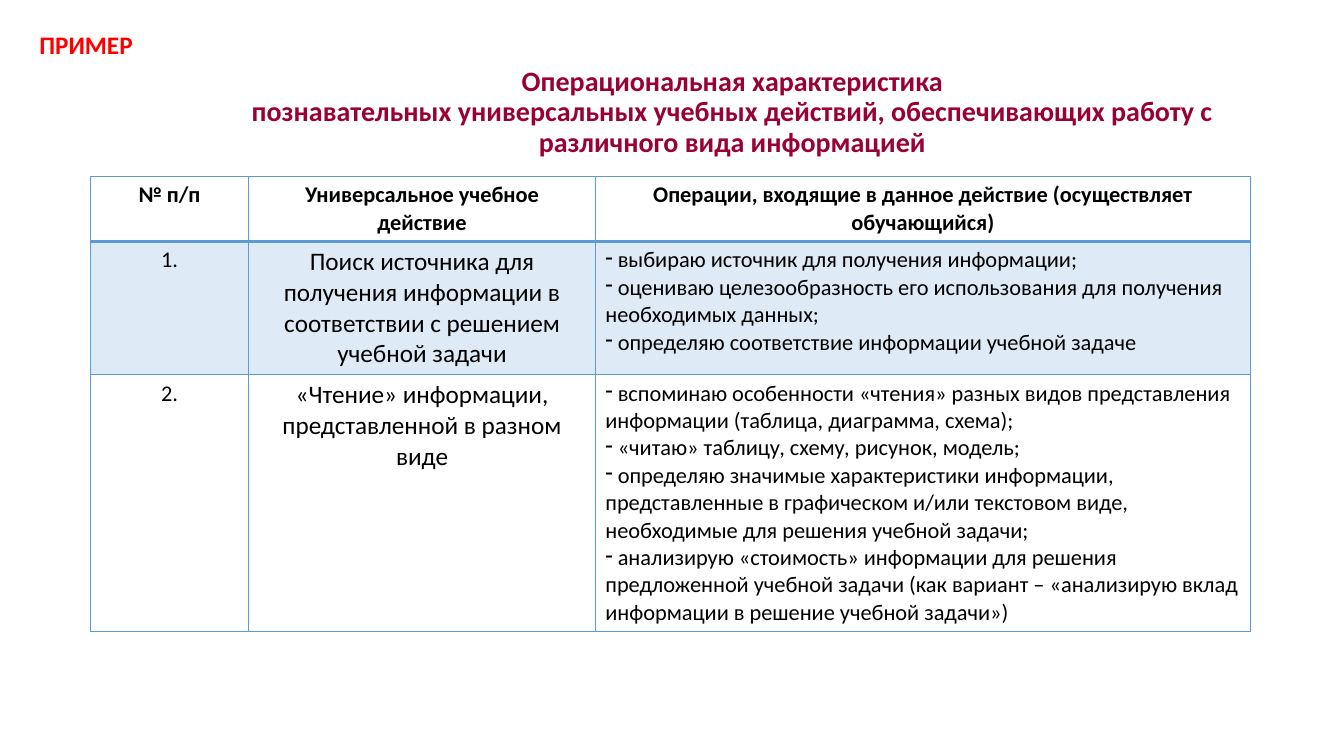
from lxml.etree import SubElement
from pptx import Presentation
from pptx.dml.color import RGBColor
from pptx.enum.text import MSO_ANCHOR, MSO_AUTO_SIZE, PP_ALIGN
from pptx.oxml.ns import qn
from pptx.util import Pt

PX = 9525  # EMU in one px, 96 px to the inch
FONT = "Calibri"
BLACK = RGBColor(0x00, 0x00, 0x00)
RED = RGBColor(0xFF, 0x00, 0x00)
CRIMSON = RGBColor(0x99, 0x00, 0x33)
BLUE = RGBColor(0x5B, 0x9B, 0xD5)
PALE_BLUE = RGBColor(0xDE, 0xEB, 0xF7)

TITLE = (
    "Операциональная характеристика\v"
    "познавательных универсальных учебных действий, "
    "обеспечивающих работу с различного вида информацией"
)
HEADERS = [
    "№ п/п",
    "Универсальное учебное действие",
    "Операции, входящие в данное действие (осуществляет обучающийся)",
]
ACTIONS = [
    ("Поиск источника для получения информации в соответствии с решением учебной задачи", [
        "выбираю источник для получения информации;",
        "оцениваю целезообразность его использования для получения необходимых данных;",
        "определяю соответствие информации учебной задаче",
    ]),
    ("«Чтение» информации, представленной в разном виде", [
        "вспоминаю особенности «чтения» разных видов представления информации "
        "(таблица, диаграмма, схема);",
        "«читаю» таблицу, схему, рисунок, модель;",
        "определяю значимые характеристики информации, представленные в графическом "
        "и/или текстовом виде, необходимые для решения учебной задачи;",
        "анализирую «стоимость» информации для решения предложенной учебной задачи "
        "(как вариант – «анализирую вклад информации в решение учебной задачи»)",
    ]),
]
COLUMN_WIDTHS = [151, 330, 624]
ROW_HEIGHTS = [62, 127, 244]


def place(shape, left, top, width, height):
    shape.left, shape.top = left * PX, top * PX
    shape.width, shape.height = width * PX, height * PX


def format_text(text_frame, size, color, bold=False, align=PP_ALIGN.LEFT):
    for paragraph in text_frame.paragraphs:
        paragraph.alignment = align
        for run in paragraph.runs:
            run.font.name = FONT
            run.font.size = Pt(size)
            run.font.bold = bold
            run.font.color.rgb = color


def add_dash_bullets(text_frame):
    for paragraph in text_frame.paragraphs:
        properties = paragraph._p.get_or_add_pPr()
        properties.set("marL", "0")
        properties.set("indent", "0")
        SubElement(properties, qn("a:buChar"), char="-")


def add_borders(cell, top, bottom):
    """Draw the four cell borders; top and bottom are widths in points."""
    properties = cell._tc.get_or_add_tcPr()
    for side, width in (("L", 1), ("R", 1), ("T", top), ("B", bottom)):
        line = SubElement(properties, qn(f"a:ln{side}"), w=str(Pt(width)))
        fill = SubElement(line, qn("a:solidFill"))
        SubElement(fill, qn("a:srgbClr"), val=str(BLUE))


def fill_cell(cell, text, size=16, bold=False, align=PP_ALIGN.CENTER):
    cell.text_frame.text = text
    format_text(cell.text_frame, size, BLACK, bold, align)


def add_title(slide):
    title = slide.shapes.title
    place(title, 202, 38, 991, 139)
    text_frame = title.text_frame
    text_frame.text = TITLE
    text_frame.word_wrap = True
    text_frame.auto_size = MSO_AUTO_SIZE.NONE
    text_frame.vertical_anchor = MSO_ANCHOR.MIDDLE
    format_text(text_frame, 20, CRIMSON, True, PP_ALIGN.CENTER)
    text_frame.paragraphs[0].line_spacing = 0.9


def add_actions_table(slide):
    table = slide.shapes.add_table(
        len(ROW_HEIGHTS), len(COLUMN_WIDTHS), 86 * PX, 168 * PX,
        sum(COLUMN_WIDTHS) * PX, sum(ROW_HEIGHTS) * PX,
    ).table
    table.first_row = table.horz_banding = False
    for column, width in zip(table.columns, COLUMN_WIDTHS):
        column.width = width * PX
    for row, height in zip(table.rows, ROW_HEIGHTS):
        row.height = height * PX

    for index, header in enumerate(HEADERS):
        fill_cell(table.cell(0, index), header, bold=True)
    for number, (action, operations) in enumerate(ACTIONS, start=1):
        number_cell, action_cell, operations_cell = table.rows[number].cells
        fill_cell(number_cell, f"{number}.")
        fill_cell(action_cell, action, size=18)
        operation_lines = "\n".join(f" {operation}" for operation in operations)
        fill_cell(operations_cell, operation_lines, align=PP_ALIGN.LEFT)
        add_dash_bullets(operations_cell.text_frame)

    for index, row in enumerate(table.rows):
        for cell in row.cells:
            add_borders(cell, top=2 if index == 1 else 1, bottom=2 if index == 0 else 1)
            if index == 1:
                cell.fill.solid()
                cell.fill.fore_color.rgb = PALE_BLUE
            else:
                cell.fill.background()


def add_label(slide, text):
    label = slide.shapes.add_textbox(28 * PX, 23 * PX, 168 * PX, 38 * PX)
    label.text_frame.text = text
    label.text_frame.word_wrap = True
    format_text(label.text_frame, 18, RED, bold=True)


def main():
    presentation = Presentation()
    presentation.slide_width = 1280 * PX
    presentation.slide_height = 720 * PX
    title_only = presentation.slide_layouts[5]
    slide = presentation.slides.add_slide(title_only)
    add_title(slide)
    add_actions_table(slide)
    add_label(slide, "ПРИМЕР")
    presentation.save("out.pptx")


if __name__ == "__main__":
    main()
